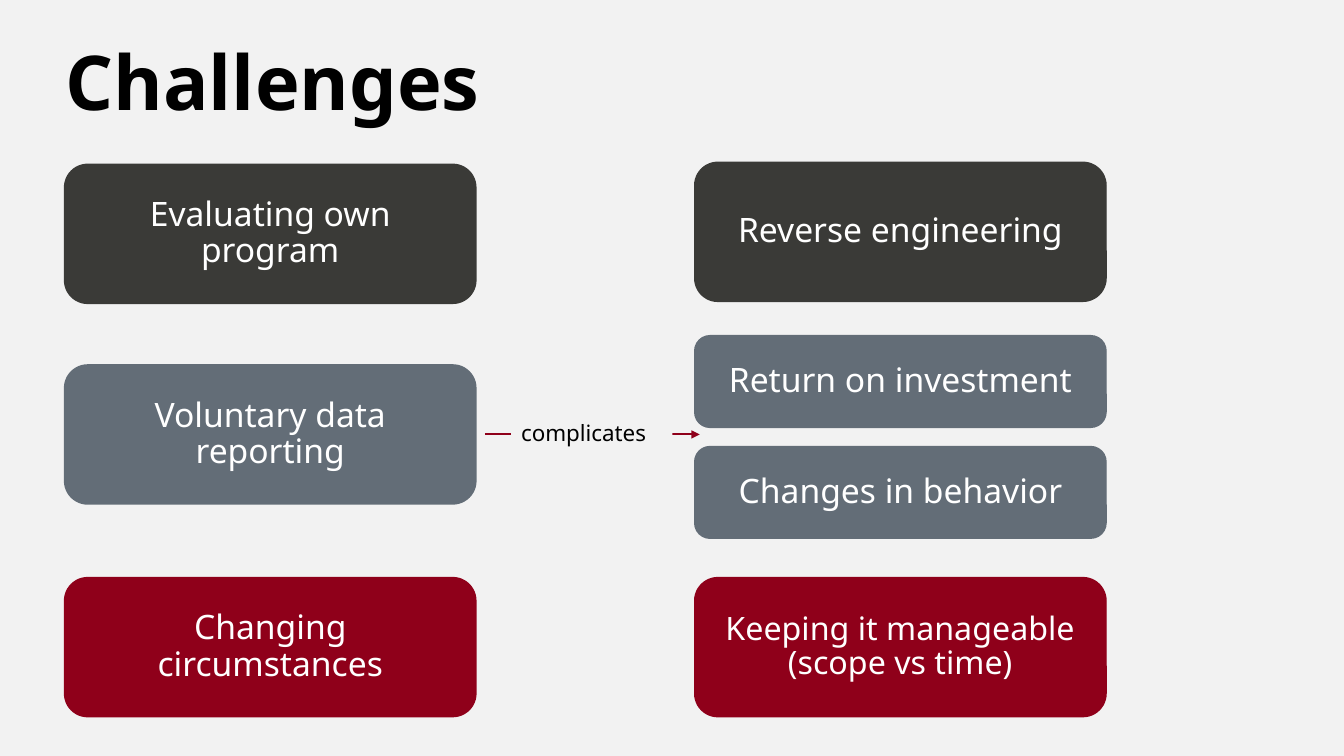
import pptx
import pptx.util
import pptx.dml.color
import pptx.enum.shapes
import pptx.enum.text
import pptx.oxml
import pptx.oxml.ns
from dataclasses import dataclass

Inches, Pt = pptx.util.Inches, pptx.util.Pt
RGB = pptx.dml.color.RGBColor.from_string
SHAPE = pptx.enum.shapes.MSO_SHAPE
ALIGN = pptx.enum.text.PP_ALIGN
ANCHOR = pptx.enum.text.MSO_ANCHOR


@dataclass(frozen=True)
class Theme:
    font: str = "Noto Sans"
    paper: str = "F2F2F2"
    ink: str = "000000"
    white: str = "FFFFFF"
    charcoal: str = "3A3A37"
    slate: str = "636D77"
    crimson: str = "8F001A"
    title: int = 54
    body: int = 24
    body_small: int = 23
    label: int = 16


theme = Theme()


def write(sp, text, size, color, align, spacing=1.0, bold=False):
    """Fill a shape with text, one paragraph per line, in one style."""
    tf = sp.text_frame
    tf.word_wrap = True
    tf.text = text
    for p in tf.paragraphs:
        p.alignment = align
        p.line_spacing = spacing
        for r in p.runs:
            r.font.name = theme.font
            r.font.size = Pt(size)
            r.font.bold = bold
            r.font.color.rgb = RGB(color)


prs = pptx.Presentation()
prs.slide_width, prs.slide_height = Inches(13.33), Inches(7.5)
s = prs.slides.add_slide(prs.slide_layouts[6])
s.background.fill.solid()
s.background.fill.fore_color.rgb = RGB(theme.paper)

title = s.shapes.add_textbox(Inches(0.55), Inches(0.45), Inches(11.78), Inches(0.87))
title.text_frame.margin_top = 0
write(title, "Challenges", theme.title, theme.ink, ALIGN.LEFT, 0.9, bold=True)

# Challenge boxes in two columns
left, right, box_w = 0.64, 6.89, 4.08
tall, short = 1.38, 0.91
boxes = [
    (left, 1.63, tall, theme.charcoal, theme.body, "Evaluating own program"),
    (left, 3.62, tall, theme.slate, theme.body, "Voluntary data reporting"),
    (left, 5.73, tall, theme.crimson, theme.body, "Changing circumstances"),
    (right, 1.61, tall, theme.charcoal, theme.body, "Reverse engineering"),
    (right, 3.33, short, theme.slate, theme.body, "Return on investment"),
    (right, 4.43, short, theme.slate, theme.body, "Changes in behavior"),
    (right, 5.73, tall, theme.crimson, theme.body_small,
     "Keeping it manageable\n(scope vs time)"),
]
for x, y, h, color, size, text in boxes:
    sp = s.shapes.add_shape(SHAPE.ROUNDED_RECTANGLE,
                            Inches(x), Inches(y), Inches(box_w), Inches(h))
    sp.shadow.inherit = False
    sp.fill.solid()
    sp.fill.fore_color.rgb = RGB(color)
    sp.line.color.rgb = RGB(color)
    sp.line.width = Pt(1)
    sp.text_frame.vertical_anchor = ANCHOR.MIDDLE
    write(sp, text, size, theme.white, ALIGN.CENTER, 0.9)

# Arrow from voluntary reporting to the two boxes it complicates
arrow = s.shapes.add_connector(pptx.enum.shapes.MSO_CONNECTOR.STRAIGHT,
                               Inches(4.81), Inches(4.31), Inches(6.94), Inches(4.31))
arrow.line.color.rgb = RGB(theme.crimson)
arrow.line.width = Pt(1.5)
ns = pptx.oxml.ns.nsdecls("a")
arrow.line._get_or_add_ln().append(
    pptx.oxml.parse_xml(f'<a:tailEnd {ns} type="triangle"/>'))
arrow._element.spPr.append(pptx.oxml.parse_xml(f"<a:effectLst {ns}/>"))

label = s.shapes.add_shape(SHAPE.RECTANGLE,
                           Inches(5.07), Inches(4.11), Inches(1.6), Inches(0.37))
label.shadow.inherit = False
label.fill.solid()
label.fill.fore_color.rgb = RGB(theme.paper)
label.line.fill.background()
label.text_frame.vertical_anchor = ANCHOR.TOP
write(label, "complicates", theme.label, theme.ink, ALIGN.LEFT)

prs.save("out.pptx")
